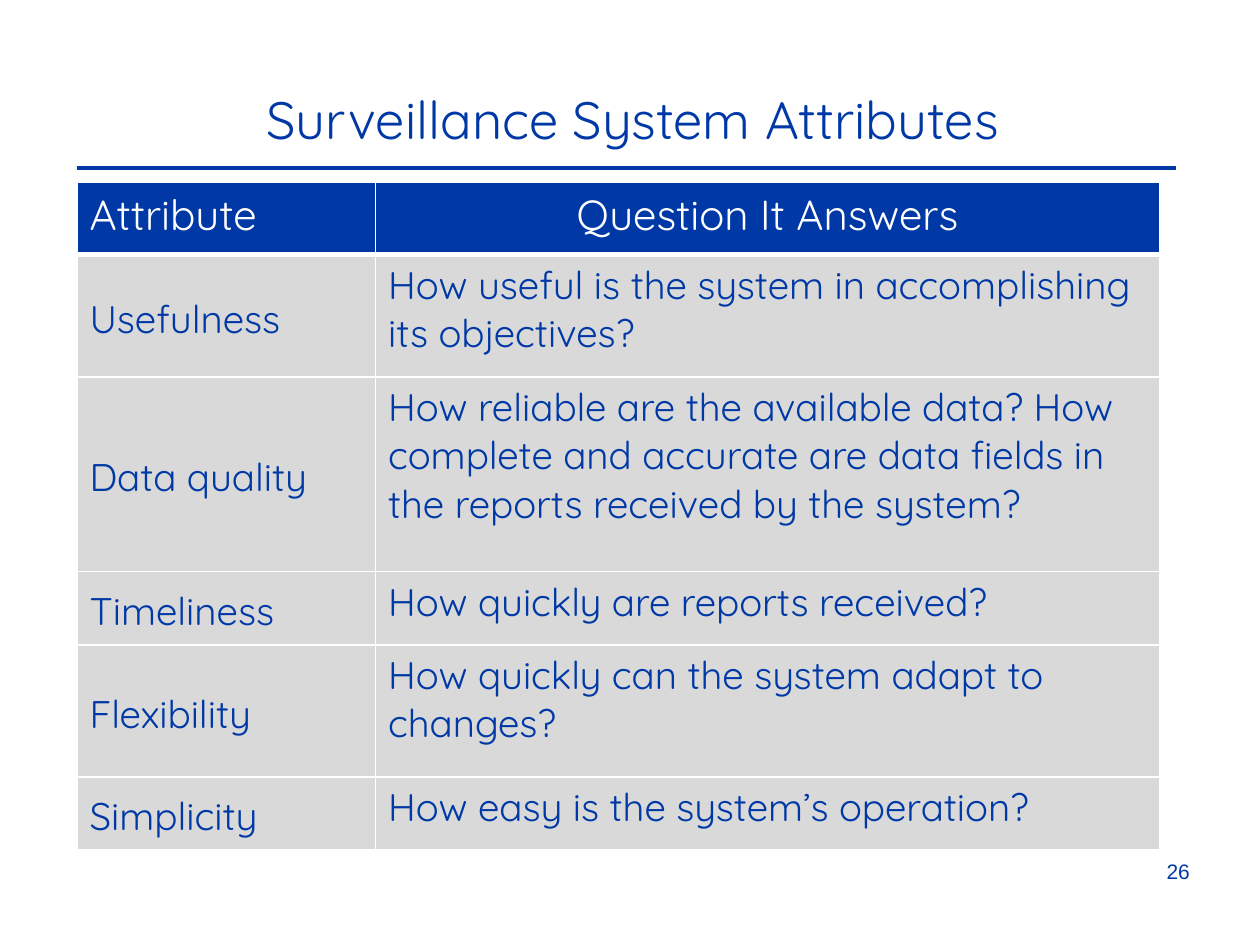
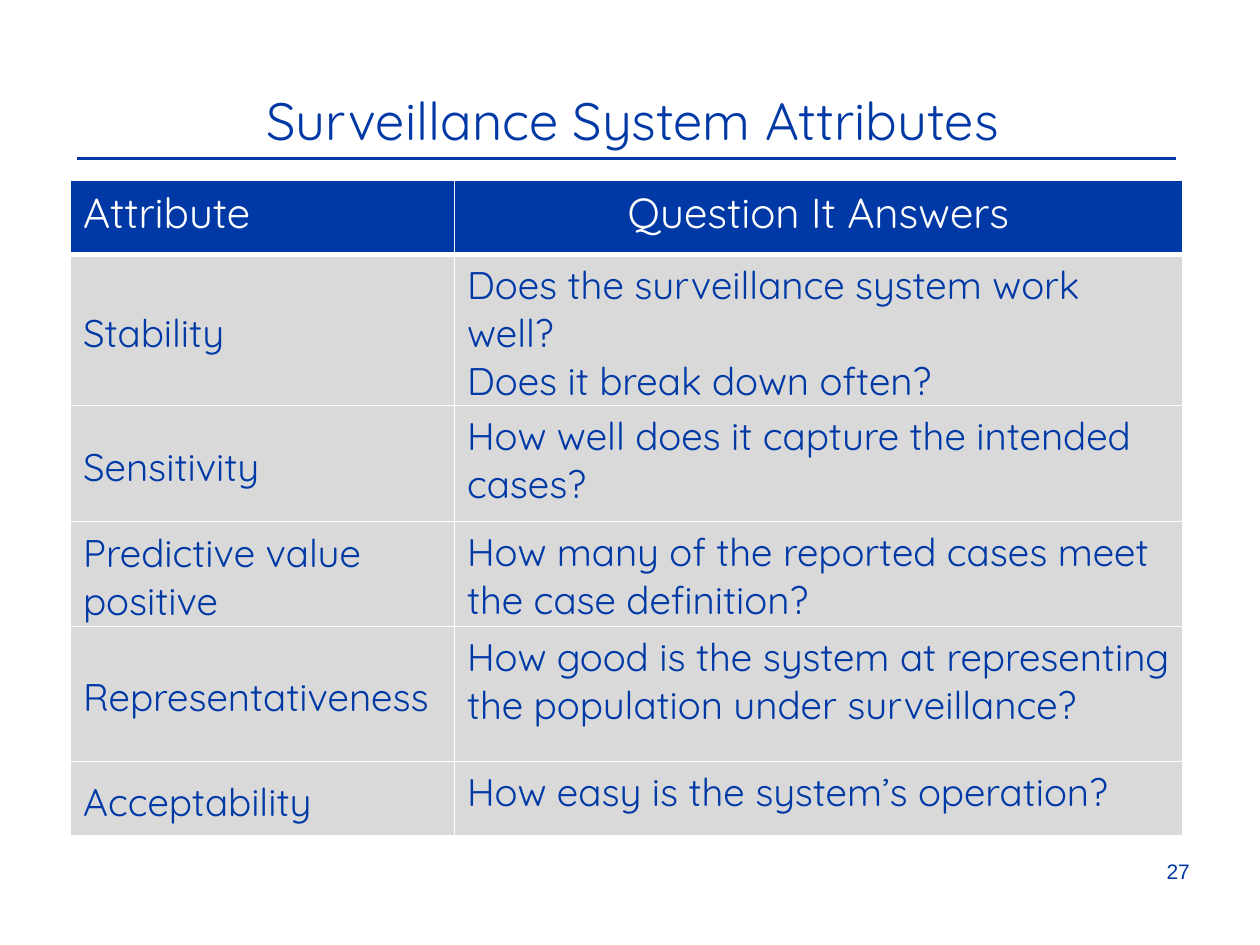
from lxml import etree
from pptx import Presentation
from pptx.dml.color import RGBColor as RGB
from pptx.enum.shapes import MSO_CONNECTOR as CONN
from pptx.enum.text import MSO_ANCHOR as ANCHOR, PP_ALIGN as ALIGN
from pptx.oxml import parse_xml
from pptx.oxml.ns import nsdecls, qn
from pptx.util import Pt

C = {"blue": "0039A6", "white": "FFFFFF", "grey": "D9D9D9"}
FONT = "Quicksand"
TITLE = "Surveillance System Attributes"
HEADER = ("Attribute", "Question It Answers")

# One entry per slide; row heights include the header row
slides = [
    {"number": 26, "title_top": 46, "rule_y": 96, "left": 44, "top": 104,
     "cols": (170.6, 448), "heights": (41.5, 70, 111, 42, 75.5, 41.5),
     "rows": [
         ("Usefulness", "How useful is the system in accomplishing its objectives?"),
         ("Data quality", "How reliable are the available data? How complete and accurate "
                          "are data fields in the reports received by the system?"),
         ("Timeliness", "How quickly are reports received?"),
         ("Flexibility", "How quickly can the system adapt to changes?"),
         ("Simplicity", "How easy is the system’s operation?")]},
    {"number": 27, "title_top": 46.8, "rule_y": 90.5, "left": 40.3, "top": 103,
     "cols": (219.4, 416), "heights": (42.5, 86.3, 66.3, 60, 77, 42.5),
     "rows": [
         ("Stability", "Does the surveillance system work well?\vDoes it break down often?"),
         ("Sensitivity", "How well does it capture the intended cases?"),
         ("Predictive value positive", "How many of the reported cases meet the case definition?"),
         ("Representativeness", "How good is the system at representing the population "
                                "under surveillance?"),
         ("Acceptability", "How easy is the system’s operation?")]},
]


def set_text(tf, text, size, color, font=FONT, align=ALIGN.LEFT):
    p = tf.paragraphs[0]
    p.text = text
    p.alignment = align
    p.font.size, p.font.name, p.font.bold = Pt(size), font, False
    p.font.color.rgb = RGB.from_string(C[color])


def set_borders(cell, top, bottom):
    tcPr = cell._tc.get_or_add_tcPr()
    for side, width in (("L", 1), ("R", 1), ("T", top), ("B", bottom)):
        tcPr.append(parse_xml(
            f'<a:ln{side} {nsdecls("a")} w="{Pt(width)}"><a:solidFill>'
            f'<a:srgbClr val="{C["white"]}"/></a:solidFill></a:ln{side}>'))


prs = Presentation()
prs.slide_width, prs.slide_height = Pt(720), Pt(540)

for info in slides:
    s = prs.slides.add_slide(prs.slide_layouts[6])

    # Rule under the title
    rule = s.shapes.add_connector(CONN.STRAIGHT, Pt(44), Pt(info["rule_y"]),
                                  Pt(672), Pt(info["rule_y"]))
    rule.line.color.rgb = RGB.from_string(C["blue"])
    rule.line.width = Pt(2)
    etree.SubElement(rule._element.spPr, qn("a:effectLst"))

    # Title
    sp = s.shapes.add_textbox(Pt(134), Pt(info["title_top"]), Pt(455), Pt(44))
    sp.text_frame.word_wrap = False
    set_text(sp.text_frame, TITLE, 30, "blue", align=ALIGN.CENTER)

    # Slide number
    sp = s.shapes.add_textbox(Pt(519), Pt(487), Pt(168), Pt(37))
    sp.text_frame.word_wrap = True
    set_text(sp.text_frame, str(info["number"]), 12, "blue", "Arial", ALIGN.RIGHT)

    # Attribute table
    rows = [HEADER] + info["rows"]
    table = s.shapes.add_table(len(rows), 2, Pt(info["left"]), Pt(info["top"]),
                               Pt(sum(info["cols"])), Pt(sum(info["heights"]))).table
    table.first_row = table.horz_banding = False
    for col, width in zip(table.columns, info["cols"]):
        col.width = Pt(width)
    for r, texts in enumerate(rows):
        table.rows[r].height = Pt(info["heights"][r])
        header = r == 0
        for c, text in enumerate(texts):
            cell = table.cell(r, c)
            cell.margin_top, cell.margin_bottom = Pt(3.6), Pt(0)
            set_borders(cell, 3 if r == 1 else 1, 3 if header else 1)
            cell.fill.solid()
            cell.fill.fore_color.rgb = RGB.from_string(C["blue" if header else "grey"])
            if c == 0 and not header:
                cell.vertical_anchor = ANCHOR.MIDDLE
            set_text(cell.text_frame, text, 24 if header else 22,
                     "white" if header else "blue",
                     align=ALIGN.CENTER if header and c == 1 else ALIGN.LEFT)

prs.save("out.pptx")
